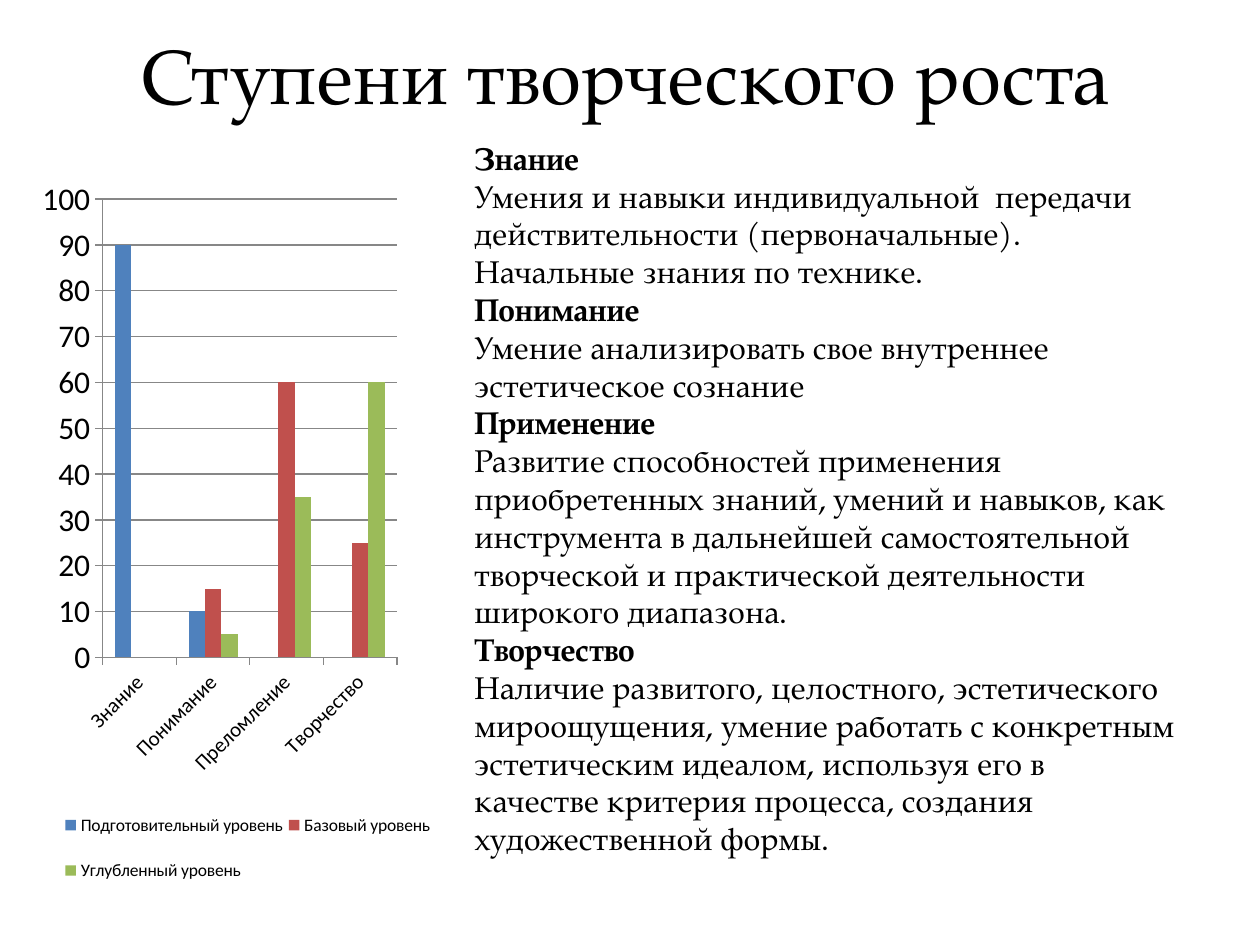
import pptx
import pptx.chart.data
import pptx.dml.color
import pptx.enum.chart
import pptx.enum.text
import pptx.oxml
import pptx.oxml.ns
import pptx.util

BLACK = pptx.dml.color.RGBColor(0x00, 0x00, 0x00)
GRAY = pptx.dml.color.RGBColor(0x87, 0x87, 0x87)
BLUE = pptx.dml.color.RGBColor(0x4F, 0x81, 0xBD)
RED = pptx.dml.color.RGBColor(0xC0, 0x50, 0x4D)
GREEN = pptx.dml.color.RGBColor(0x9B, 0xBB, 0x59)

STAGES = ["Знание", "Понимание", "Преломление", "Творчество"]
LEVELS = [
    ("Подготовительный уровень", [90, 10, None, None], BLUE),
    ("Базовый уровень", [None, 15, 60, 25], RED),
    ("Углубленный уровень", [None, 5, 35, 60], GREEN),
]
DESCRIPTIONS = {
    "Знание": [
        "Умения и навыки индивидуальной  передачи действительности (первоначальные).",
        "Начальные знания по технике.",
    ],
    "Понимание": ["Умение анализировать свое внутреннее эстетическое сознание"],
    "Применение": [
        "Развитие способностей применения приобретенных знаний, умений и навыков, "
        "как инструмента в дальнейшей самостоятельной",
        "творческой и практической деятельности широкого диапазона.",
    ],
    "Творчество": [
        "Наличие развитого, целостного, эстетического мироощущения, "
        "умение работать с конкретным",
        "эстетическим идеалом, используя его в",
        "качестве критерия процесса, создания",
        "художественной формы.",
    ],
}


class SlideBuilder:
    """Holds the style and the current slide, and adds each kind of element."""

    text_font = "TeX Gyre Pagella"
    chart_font = "Calibri"
    px_per_inch = 126

    def __init__(self, presentation, width, height):
        presentation.slide_width = self.emu(width)
        presentation.slide_height = self.emu(height)
        self.slide = presentation.slides.add_slide(presentation.slide_layouts[6])

    def emu(self, px):
        return pptx.util.Emu(round(px * 914400 / self.px_per_inch))

    def style(self, font, name, size, bold=False):
        font.name = name
        font.size = pptx.util.Pt(size)
        font.bold = bold
        font.color.rgb = BLACK

    def text(self, box, lines, size, align=pptx.enum.text.PP_ALIGN.LEFT):
        frame = self.slide.shapes.add_textbox(*map(self.emu, box)).text_frame
        frame.word_wrap = True
        frame.vertical_anchor = pptx.enum.text.MSO_ANCHOR.MIDDLE
        frame.text = "\n".join(line for line, bold in lines)
        for paragraph, (line, bold) in zip(frame.paragraphs, lines):
            paragraph.alignment = align
            for run in paragraph.runs:
                self.style(run.font, self.text_font, size, bold)

    def place(self, parent, index, x, y, w, h, inner=False):
        for previous in parent.findall(pptx.oxml.ns.qn("c:layout")):
            parent.remove(previous)
        target = '<c:layoutTarget val="inner"/>' if inner else ""
        parent.insert(index, pptx.oxml.parse_xml(
            f'<c:layout {pptx.oxml.ns.nsdecls("c")}><c:manualLayout>{target}'
            '<c:xMode val="edge"/><c:yMode val="edge"/>'
            f'<c:x val="{x}"/><c:y val="{y}"/><c:w val="{w}"/><c:h val="{h}"/>'
            '</c:manualLayout></c:layout>'))

    def axis(self, axis, size):
        axis.major_tick_mark = pptx.enum.chart.XL_TICK_MARK.OUTSIDE
        axis.minor_tick_mark = pptx.enum.chart.XL_TICK_MARK.NONE
        axis.format.line.color.rgb = GRAY
        self.style(axis.tick_labels.font, self.chart_font, size)

    def column_chart(self, box, categories, series):
        data = pptx.chart.data.CategoryChartData()
        data.categories = categories
        for name, values, color in series:
            data.add_series(name, values)
        chart = self.slide.shapes.add_chart(
            pptx.enum.chart.XL_CHART_TYPE.COLUMN_CLUSTERED,
            *map(self.emu, box), data).chart
        chart.has_title = False
        self.style(chart.font, self.chart_font, 18)

        plot = chart.plots[0]
        plot.gap_width = 150
        plot.overlap = 0
        plot.vary_by_categories = False
        for bars, (name, values, color) in zip(plot.series, series):
            bars.format.fill.solid()
            bars.format.fill.fore_color.rgb = color
            bars.invert_if_negative = False

        self.axis(chart.category_axis, 12)
        self.axis(chart.value_axis, 18)
        chart.value_axis.minimum_scale = 0
        chart.value_axis.maximum_scale = 100
        chart.value_axis.major_unit = 10
        chart.value_axis.has_major_gridlines = True
        chart.value_axis.major_gridlines.format.line.color.rgb = GRAY

        chart.has_legend = True
        legend = chart.legend
        legend.position = pptx.enum.chart.XL_LEGEND_POSITION.RIGHT
        legend.include_in_layout = False
        self.style(legend.font, self.chart_font, 10)

        plot_area = chart.element.find(".//" + pptx.oxml.ns.qn("c:plotArea"))
        legend_area = chart.element.find(".//" + pptx.oxml.ns.qn("c:legend"))
        self.place(plot_area, 0, 0.17, 0.04, 0.68, 0.59, inner=True)
        self.place(legend_area, 1, 0.07, 0.8, 0.87, 0.15)


def main():
    presentation = pptx.Presentation()
    builder = SlideBuilder(presentation, 1260, 945)
    builder.text((59, 20, 1134, 108), [("Ступени творческого роста", False)], 44,
                 pptx.enum.text.PP_ALIGN.CENTER)
    builder.column_chart((29, 168, 433, 777), STAGES, LEVELS)
    lines = []
    for stage, sentences in DESCRIPTIONS.items():
        lines.append((stage, True))
        lines.extend((sentence, False) for sentence in sentences)
    builder.text((462, 129, 738, 738), lines, 18)
    presentation.save("out.pptx")


if __name__ == "__main__":
    main()
